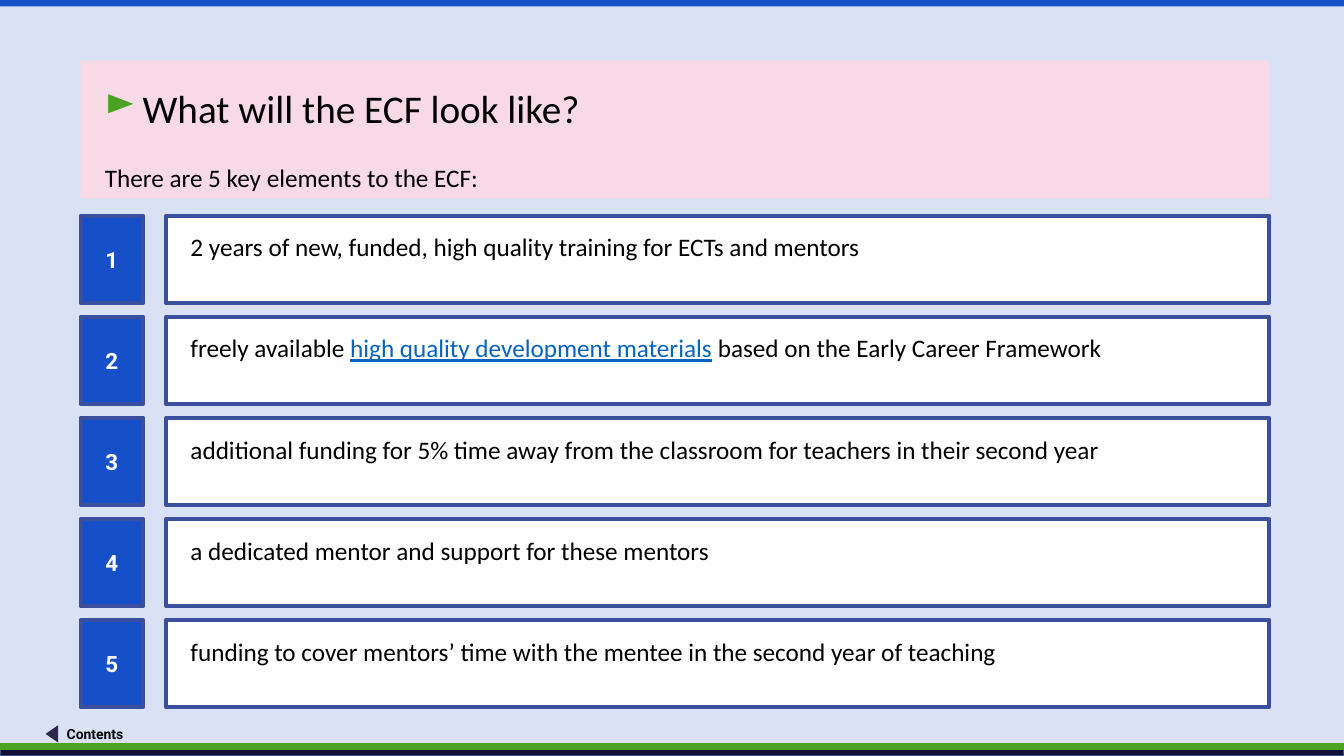
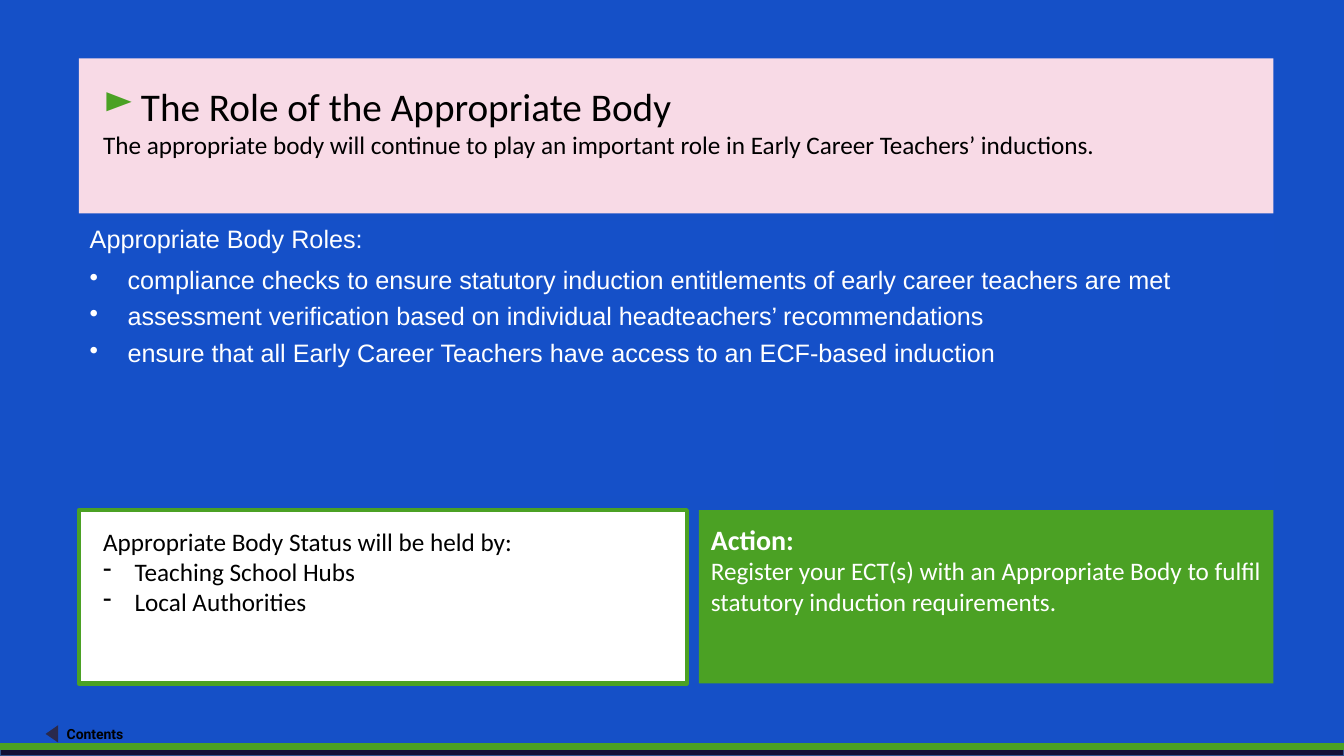
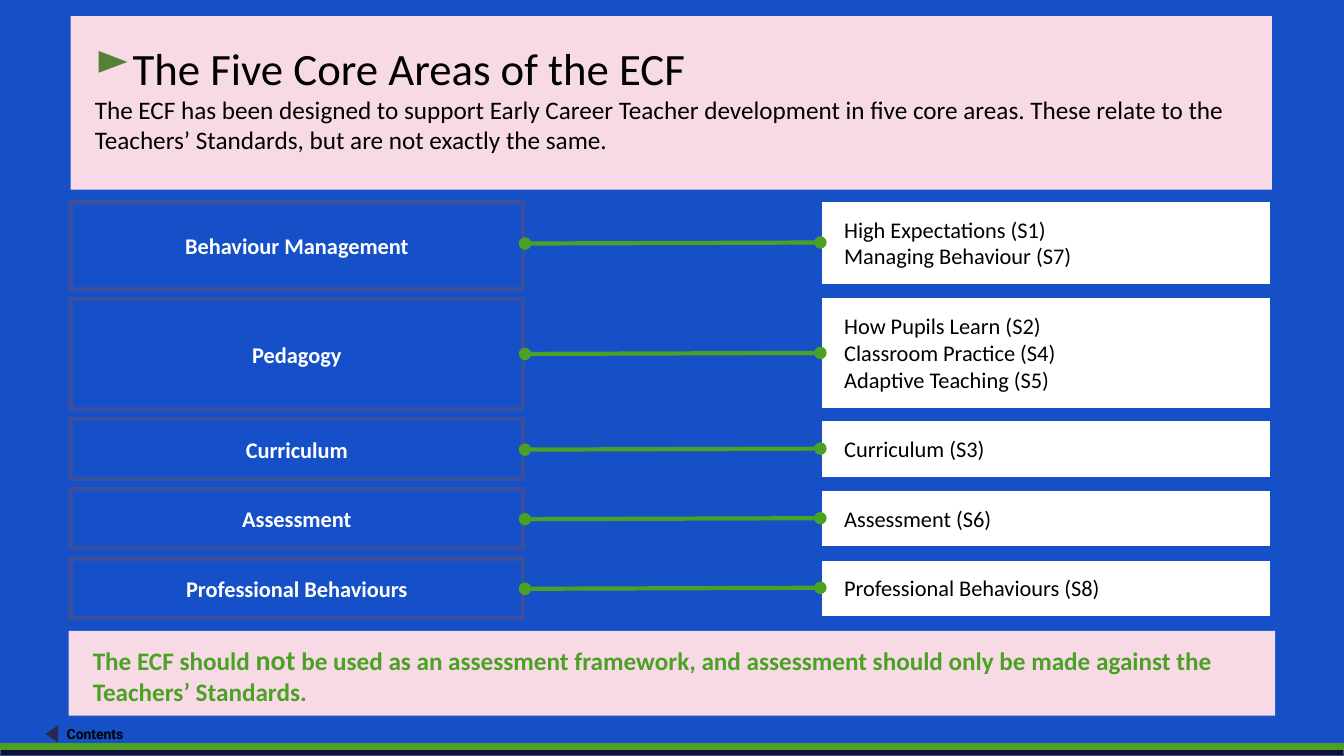
from dataclasses import dataclass
from typing import Any, Optional

import pptx
import pptx.chart.data
import pptx.dml.color
import pptx.enum.shapes
import pptx.enum.text
import pptx.oxml.ns
import pptx.util
from lxml import etree

Pt = pptx.util.Pt
Kind = pptx.enum.shapes.MSO_SHAPE
Align = pptx.enum.text.PP_ALIGN
Anchor = pptx.enum.text.MSO_ANCHOR
qn = pptx.oxml.ns.qn

# Shared look
WIDE, HIGH = 960, 540
BLUE, EDGE, GREEN, PINK = "1550C8", "3A4F9D", "4BA124", "F8DAE6"
WHITE, BLACK, NAVY, SLATE = "FFFFFF", "000000", "120E35", "2A294C"
LEAF, LINK = "548135", "0563C1"
PLAIN = "{2D5ABB26-0587-4C30-8999-92F81FD0307C}"  # table style without grid
HEAD = (17.3, 17.3, 17.3, 8.6)
BODY = (17.3, 11.5, 17.3, 11.5)
TIGHT = (8.6, 8.6, 8.6, 8.6)
NOTE = (17.3, 8.6, 17.3, 8.6)


@dataclass(frozen=True)
class Span:
    text: str
    color: Optional[str] = None
    size: Optional[float] = None
    under: bool = False


@dataclass(frozen=True)
class Line:
    text: str = ""
    size: float = 18
    color: str = BLACK
    font: str = "Calibri"
    bold: bool = False
    align: Any = Align.LEFT
    bullet: str = ""
    tint: str = BLACK
    hang: float = 27
    before: float = 0
    spans: tuple[Span, ...] = ()


@dataclass(frozen=True)
class Box:
    left: float
    top: float
    width: float
    height: float


@dataclass(frozen=True)
class Area:
    name: str
    top: float
    height: float
    items: tuple[str, ...]
    drop: float = 0  # offset of the name box below the items box
    trim: float = 0  # how much shorter the name box is


def rgb(code: str) -> Any:
    return pptx.dml.color.RGBColor.from_string(code)


# Text
def mark(para: Any, line: Line) -> None:
    props = para._p.get_or_add_pPr()
    props.set("marL", str(Pt(line.hang)))
    props.set("indent", str(-Pt(line.hang)))
    tint = etree.SubElement(props, qn("a:buClr"))
    etree.SubElement(tint, qn("a:srgbClr"), val=line.tint)
    etree.SubElement(props, qn("a:buChar"), char=line.bullet)


def write(frame: Any, lines: list[Line]) -> None:
    for i, line in enumerate(lines):
        para = frame.add_paragraph() if i else frame.paragraphs[0]
        para.alignment = line.align
        para.space_before = Pt(line.before)
        if line.bullet:
            mark(para, line)
        font = para.font
        font.name, font.size, font.bold = line.font, Pt(line.size), line.bold
        font.color.rgb = rgb(line.color)
        for span in line.spans or (Span(line.text),):
            run = para.add_run()
            run.text = span.text
            if span.color:
                run.font.color.rgb = rgb(span.color)
            if span.size:
                run.font.size = Pt(span.size)
            if span.under:
                run.font.underline = True


def fit(frame: Any, pads: tuple[float, ...], anchor: Any = Anchor.TOP) -> None:
    frame.word_wrap = True
    frame.vertical_anchor = anchor
    frame.margin_left, frame.margin_top, frame.margin_right, frame.margin_bottom = map(Pt, pads)


# Shapes
def place(box: Box) -> tuple[int, ...]:
    return tuple(Pt(n) for n in (box.left, box.top, box.width, box.height))


def panel(slide: Any, box: Box, fill: str, edge: str = "", weight: float = 3,
          lines: Optional[list[Line]] = None, pads: tuple[float, ...] = BODY,
          anchor: Any = Anchor.TOP, kind: Any = Kind.RECTANGLE) -> Any:
    shape = slide.shapes.add_shape(kind, *place(box))
    shape.shadow.inherit = False
    shape.fill.solid()
    shape.fill.fore_color.rgb = rgb(fill)
    if edge:
        shape.line.color.rgb = rgb(edge)
        shape.line.width = Pt(weight)
    else:
        shape.line.fill.background()
    if lines:
        fit(shape.text_frame, pads, anchor)
        write(shape.text_frame, lines)
    return shape


def link(slide: Any, left: float, right: float, mid: float) -> None:
    wire = slide.shapes.add_connector(
        pptx.enum.shapes.MSO_CONNECTOR.STRAIGHT,
        Pt(left), Pt(mid + 0.4), Pt(right), Pt(mid - 0.3))
    wire.line.color.rgb = rgb(GREEN)
    wire.line.width = Pt(3)
    stroke = wire.line._get_or_add_ln()
    for end in ("a:headEnd", "a:tailEnd"):
        etree.SubElement(stroke, qn(end), type="oval")
    etree.SubElement(wire._element.spPr, qn("a:effectLst"))


# Parts on every slide
def start(deck: Any, pale: bool = False) -> Any:
    slide = deck.slides.add_slide(deck.slide_layouts[6])
    slide.background.fill.solid()
    slide.background.fill.fore_color.rgb = rgb("1550C7")
    if pale:
        veil = panel(slide, Box(0, 4.5, WIDE, HIGH - 4.5), WHITE)
        tone = veil._element.spPr.find(".//" + qn("a:srgbClr"))
        etree.SubElement(tone, qn("a:alpha"), val="84000")
    arrow = panel(slide, Box(30.85, 519.7, 12.5, 9), SLATE, kind=Kind.ISOSCELES_TRIANGLE)
    arrow.rotation = 270
    label = slide.shapes.add_textbox(*place(Box(47.6, 518.4, 80.6, 12.2))).text_frame
    fit(label, (0, 0, 0, 0))
    write(label, [Line("Contents", 10, font="Roboto", bold=True)])
    panel(slide, Box(0, 531.5, WIDE, 8.5), NAVY, "31538F", 1)
    panel(slide, Box(0, 531.1, WIDE, 4.3), GREEN, GREEN, 1)
    return slide


def title(slide: Any, box: Box, text: str, sub: str, size: float = 28,
          tint: str = GREEN, gap: float = 0, align: Any = Align.JUSTIFY) -> None:
    panel(slide, box, PINK, pads=HEAD, lines=[
        Line(text, size, align=Align.JUSTIFY, bullet="►", tint=tint),
        Line(sub, align=align, before=gap)])


# Slide 1: numbered elements
def look(deck: Any) -> None:
    slide = start(deck, pale=True)
    title(slide, Box(57.6, 43.2, 849, 98.6), "What will the ECF look like?",
          "There are 5 key elements to the ECF:", gap=22)
    rows = [
        Line("2 years of new, funded, high quality training for ECTs and mentors"),
        Line(spans=(Span("freely available "),
                    Span("high quality development materials", LINK, under=True),
                    Span(" based on the Early Career Framework"))),
        Line("additional funding for 5% time away from the classroom "
             "for teachers in their second year"),
        Line("a dedicated mentor and support for these mentors"),
        Line("funding to cover mentors’ time with the mentee in the second year of teaching"),
    ]
    for i, row in enumerate(rows):
        top = 154 + 72.2 * i
        panel(slide, Box(118.8, top, 787.7, 62.4), WHITE, EDGE, lines=[row])
        panel(slide, Box(57.6, top, 44.6, 62.4), BLUE, EDGE, anchor=Anchor.MIDDLE, lines=[
            Line(str(i + 1), 16, WHITE, "Roboto", True, Align.CENTER)])


# Slide 2: appropriate body
def role(deck: Any) -> None:
    slide = start(deck)
    title(slide, Box(56.4, 41.6, 853.2, 110.8), "The Role of the Appropriate Body",
          "The appropriate body will continue to play an important role "
          "in Early Career Teachers’ inductions.")
    duties = [
        "compliance checks to ensure statutory induction entitlements "
        "of early career teachers are met",
        "assessment verification based on individual headteachers’ recommendations",
        "ensure that all Early Career Teachers have access to an ECF-based induction",
    ]
    cells = [
        [Line("Appropriate Body Roles:", color=WHITE, font="Arial")],
        [Line(duty, color=WHITE, font="Arial", bullet="•", tint=WHITE, before=6 if i else 0)
         for i, duty in enumerate(duties)],
    ]
    table = slide.shapes.add_table(2, 1, *place(Box(56.9, 157.7, 853.2, 194.4))).table
    table.first_row = table.horz_banding = False
    table._tbl.tblPr.find(qn("a:tableStyleId")).text = PLAIN
    for i, (high, lines) in enumerate(zip((26.6, 167.8), cells)):
        table.rows[i].height = Pt(high)
        cell = table.cell(i, 0)
        cell.fill.solid()
        cell.fill.fore_color.rgb = rgb(BLUE)
        write(cell.text_frame, lines)
    hosts = [Line(name, bullet="-", hang=22.5)
             for name in ("Teaching School Hubs", "Local Authorities")]
    panel(slide, Box(56.4, 364.4, 434.2, 123.8), WHITE, GREEN,
          lines=[Line("Appropriate Body Status will be held by:"), *hosts])
    panel(slide, Box(499.2, 364.4, 410.4, 123.8), GREEN, pads=TIGHT, lines=[
        Line("Action:", 20, WHITE, bold=True),
        Line("Register your ECT(s) with an Appropriate Body to fulfil "
             "statutory induction requirements.", color=WHITE)])


# Slide 3: core areas and their standards
def core(deck: Any) -> None:
    slide = start(deck)
    title(slide, Box(50.4, 11.5, 858.2, 124), "The Five Core Areas of the ECF",
          "The ECF has been designed to support Early Career Teacher development in five "
          "core areas. These relate to the Teachers’ Standards, but are not exactly the same.",
          size=32, tint=LEAF, align=Align.LEFT)
    areas = [
        Area("Behaviour Management", 142.6, 61.9,
             ("High Expectations (S1)", "Managing Behaviour (S7)"), 2.1),
        Area("Pedagogy", 211.7, 81.4,
             ("How Pupils Learn (S2)", "Classroom Practice (S4)", "Adaptive Teaching (S5)"),
             2.1, 2.9),
    ]
    areas += [Area(name, 299.5 + 49.7 * i, 42.5, (f"{name} ({code})",))
              for i, (name, code) in enumerate((
                  ("Curriculum", "S3"), ("Assessment", "S6"),
                  ("Professional Behaviours", "S8")))]
    for area in areas:
        panel(slide, Box(585.7, area.top, 323.3, area.height), WHITE, BLUE,
              lines=[Line(item, 16) for item in area.items])
        panel(slide, Box(50.4, area.top + area.drop, 323.3, area.height - area.trim),
              BLUE, EDGE, anchor=Anchor.MIDDLE,
              lines=[Line(area.name, 16, WHITE, bold=True, align=Align.CENTER)])
        link(slide, 375, 586, area.top + area.height / 2)
    panel(slide, Box(49, 450.7, 861.8, 60.5), PINK, pads=NOTE, lines=[
        Line(color=GREEN, bold=True, spans=(
            Span("The ECF should "), Span("not", size=20),
            Span(" be used as an assessment framework, and assessment should only "
                 "be made against the Teachers’ Standards.")))])


def main() -> None:
    deck = pptx.Presentation()
    deck.slide_width, deck.slide_height = Pt(WIDE), Pt(HIGH)
    for build in (look, role, core):
        build(deck)
    deck.save("out.pptx")


if __name__ == "__main__":
    main()
